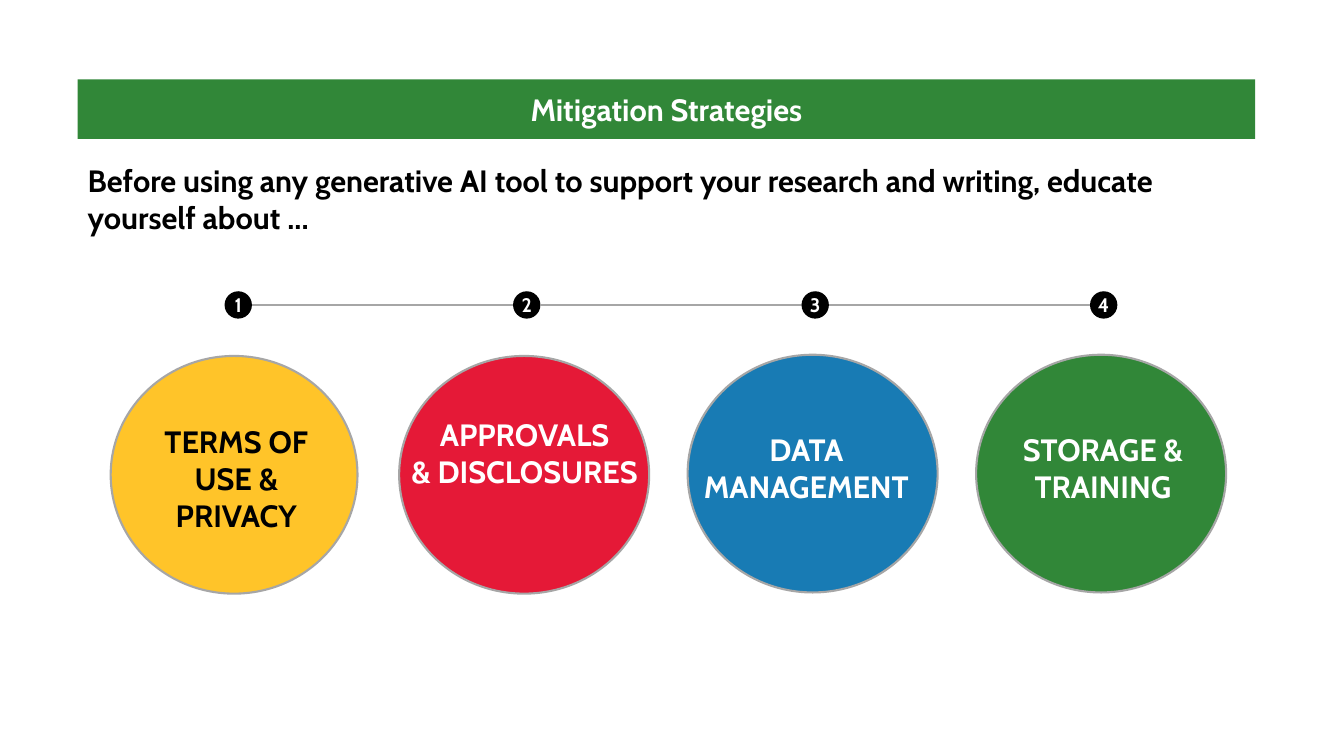
import pptx
import pptx.util
import pptx.dml.color
import pptx.enum.shapes
import pptx.enum.text
import pptx.oxml.ns
from lxml import etree

Cm, Pt = pptx.util.Cm, pptx.util.Pt
Kind = pptx.enum.shapes.MSO_SHAPE
Align = pptx.enum.text.PP_ALIGN
Anchor = pptx.enum.text.MSO_ANCHOR
rgb = pptx.dml.color.RGBColor.from_string


def add_form(kind, left, top, width, height, fill, line=None):
    form = slide.shapes.add_shape(kind, Cm(left), Cm(top), Cm(width), Cm(height))
    form.shadow.inherit = False
    form.fill.solid()
    form.fill.fore_color.rgb = rgb(fill)
    if line:
        form.line.color.rgb = rgb(line)
        form.line.width = Pt(1.5)
    else:
        form.line.fill.background()
    return form


def set_text(form, text, size, color, align=Align.CENTER):
    frame = form.text_frame
    frame.word_wrap = True
    frame.text = text
    for para in frame.paragraphs:
        para.alignment = align
        para.font.name = "Cabin"
        para.font.size = Pt(size)
        para.font.bold = True
        para.font.color.rgb = rgb(color)
    return frame


deck = pptx.Presentation()
deck.slide_width, deck.slide_height = Cm(33.87), Cm(19.05)
slide = deck.slides.add_slide(deck.slide_layouts[6])

# Title band
band = add_form(Kind.RECTANGLE, 1.96, 2, 29.67, 1.5, "318738")
set_text(band, "Mitigation Strategies", 22, "FFFFFF").vertical_anchor = Anchor.MIDDLE

# Lead sentence
lead = slide.shapes.add_textbox(Cm(1.96), Cm(3.96), Cm(29.67), Cm(2.13))
set_text(lead, "Before using any generative AI tool to support your research "
         "and writing, educate yourself about ...", 22, "000000", Align.LEFT)

# Topics: fill, text colour, circle top and width, caption box, caption
topics = [
    ("FFC429", "000000", 8.97, 6.22, (3.53, 10.54, 4.85, 3.05), "TERMS OF USE & PRIVACY"),
    ("E51937", "FFFFFF", 8.97, 6.3, (10.06, 10.34, 6.32, 2.97), "APPROVALS\n& DISCLOSURES"),
    ("187BB4", "FFFFFF", 8.94, 6.3, (17.22, 10.72, 6.2, 3.05), "DATA\nMANAGEMENT"),
    ("318738", "FFFFFF", 8.94, 6.3, (25.04, 10.74, 5.51, 3.05), "STORAGE & TRAINING"),
]
step = 7.27
dot = 0.69

for num, (fill, color, top, width, box, words) in enumerate(topics):
    # Circle and caption
    add_form(Kind.OVAL, 2.79 + num * step, top, width, 5.99, fill, "A6A6A6")
    label = slide.shapes.add_textbox(*map(Cm, box))
    set_text(label, words, 22, color)

    # Numbered dot
    left = 5.66 + num * step
    badge = add_form(Kind.OVAL, left, 7.34, dot, dot, "000000")
    frame = set_text(badge, str(num + 1), 14, "FFFFFF")
    frame.word_wrap = False
    frame.vertical_anchor = Anchor.MIDDLE
    frame.margin_left = frame.margin_right = 0
    frame.margin_top = frame.margin_bottom = 0

    # Line to the next dot
    if num < len(topics) - 1:
        link = slide.shapes.add_connector(
            pptx.enum.shapes.MSO_CONNECTOR.STRAIGHT,
            Cm(left + dot), Cm(7.69), Cm(left + step), Cm(7.69))
        link.line.color.rgb = rgb("A6A6A6")
        link.line.width = Pt(1)
        etree.SubElement(link._element.spPr, pptx.oxml.ns.qn("a:effectLst"))

deck.save("out.pptx")
